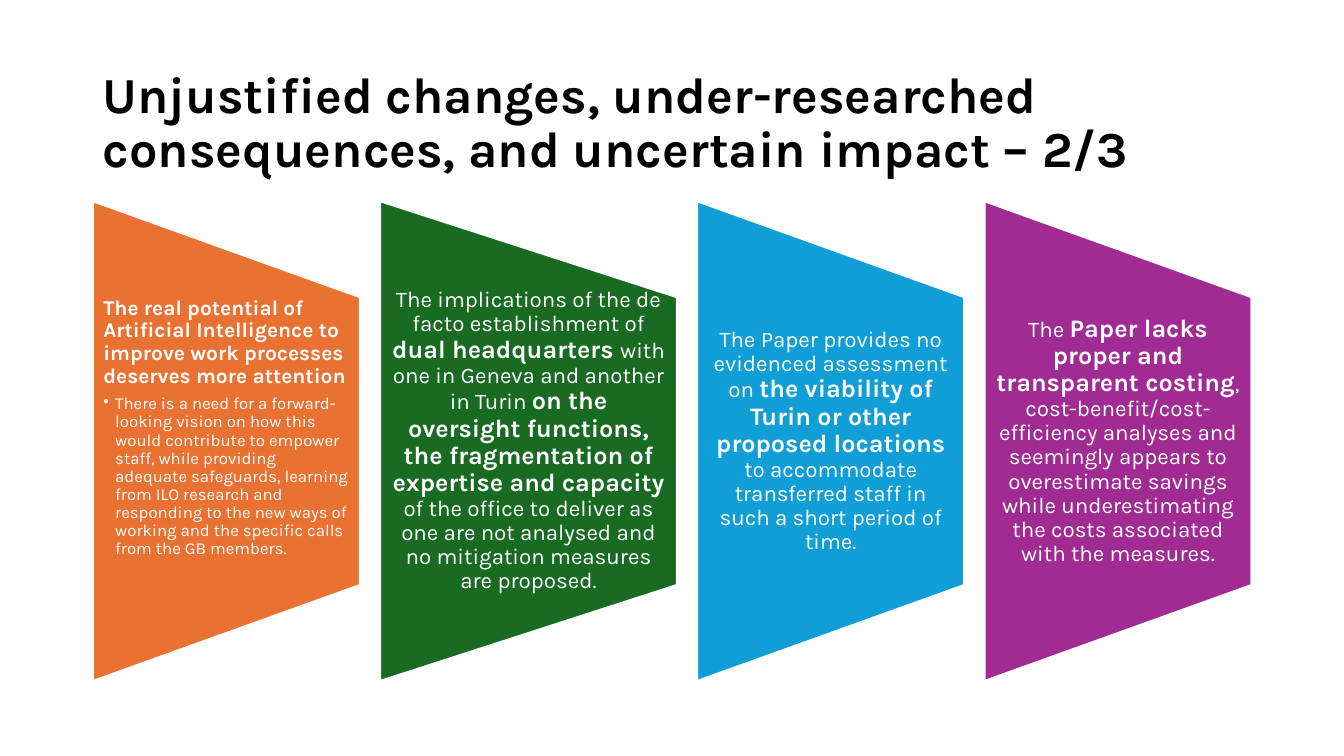
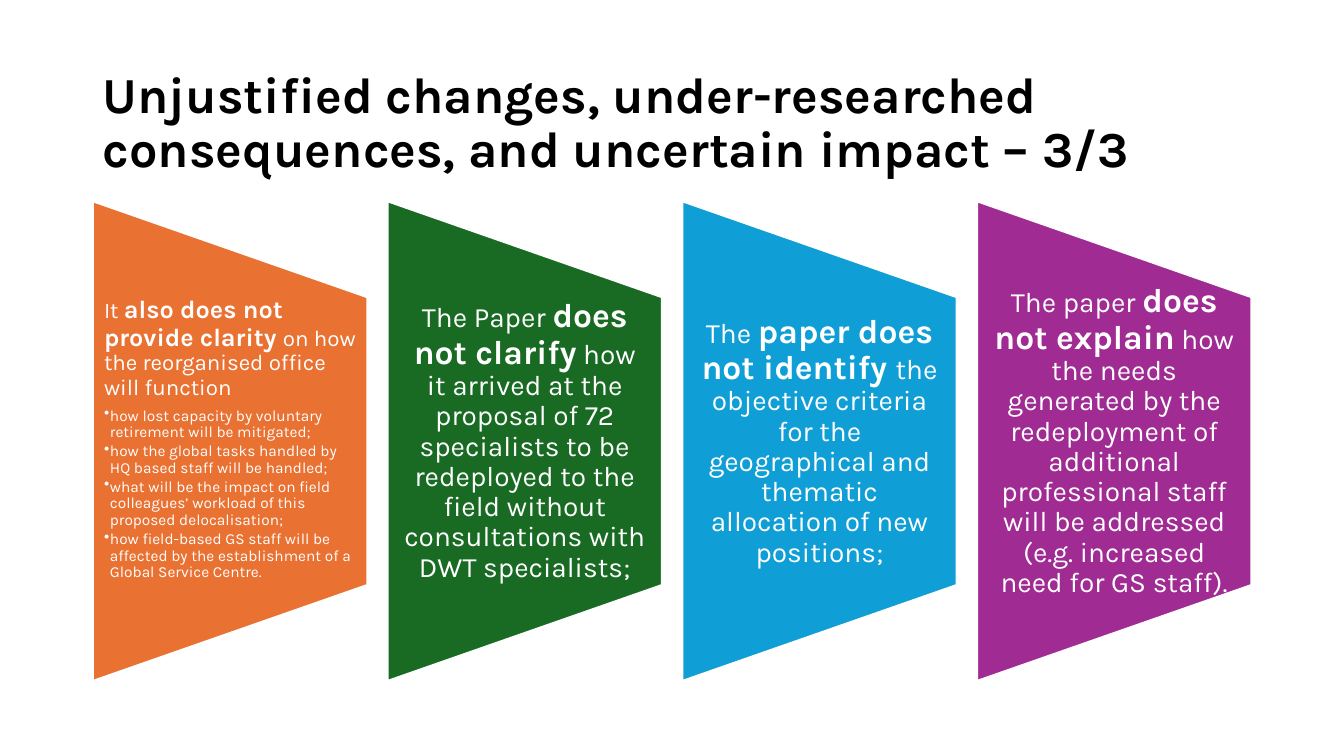
from lxml.etree import SubElement
from pptx import Presentation
from pptx.dml.color import RGBColor
from pptx.enum.shapes import MSO_SHAPE as Shape
from pptx.enum.text import MSO_ANCHOR as Anchor, PP_ALIGN as Align
from pptx.oxml.ns import qn
from pptx.util import Cm, Pt

TITLE = "Unjustified changes, under-researched consequences, and uncertain impact – {}/3"
SLIDES = [
    {
        "number": 2,
        "weights": (9, 10, 9, 9),
        "bullet_size": 12,
        "bullet_indent": 0.3,
        "cards": [
            (15, 15, "**The real potential of Artificial Intelligence to improve work "
                     "processes deserves more attention**", [
                "There is a need for a forward-looking vision on how this would contribute "
                "to empower staff, while providing adequate safeguards, learning from ILO "
                "research and responding to the new ways of working and the specific calls "
                "from the GB members.",
            ]),
            (16, 18, "The implications of the de facto establishment of **dual headquarters "
                     "**with one in Geneva and another in Turin **on the oversight functions, "
                     "the fragmentation of expertise and capacity **of the office to deliver "
                     "as one are not analysed and no mitigation measures are proposed.", []),
            (16, 18, "The Paper provides no evidenced assessment on **the viability of Turin "
                     "or other proposed locations **to accommodate transferred staff in such "
                     "a short period of time.", []),
            (16, 18, "The **Paper lacks proper and transparent costing**, cost-benefit/"
                     "cost-efficiency analyses and seemingly appears to overestimate savings "
                     "while underestimating the costs associated with the measures.", []),
        ],
    },
    {
        "number": 3,
        "weights": (1, 1, 1, 1),
        "bullet_size": 11,
        "bullet_indent": 0.15,
        "cards": [
            (16, 18, "It **also does not provide clarity **on how the reorganised office "
                     "will function", [
                "how lost capacity by voluntary retirement will be mitigated;",
                "how the global tasks handled by HQ based staff will be handled;",
                "what will be the impact on field colleagues’ workload of this proposed "
                "delocalisation;",
                "how field-based GS staff will be affected by the establishment of a "
                "Global Service Centre.",
            ]),
            (20, 24, "The Paper **does not clarify** how it arrived at the proposal of 72 "
                     "specialists to be redeployed to the field without consultations with "
                     "DWT specialists;", []),
            (20, 24, "The **paper does not identify **the objective criteria for the "
                     "geographical and thematic allocation of new positions;", []),
            (20, 24, "The paper **does not explain** how the needs generated by the "
                     "redeployment of additional professional staff will be addressed "
                     "(e.g. increased need for GS staff).", []),
        ],
    },
]

FONT = "Karla"
BLACK = RGBColor(0x00, 0x00, 0x00)
WHITE = RGBColor(0xFF, 0xFF, 0xFF)
CARD_COLOURS = (
    RGBColor(0xE9, 0x71, 0x32),
    RGBColor(0x19, 0x6B, 0x24),
    RGBColor(0x0F, 0x9E, 0xD5),
    RGBColor(0xA0, 0x2B, 0x93),
)

LEFT, CONTENT_WIDTH = 2.34, 29.2
TITLE_TOP, TITLE_HEIGHT = 1.55, 3.15
CARD_TOP, CARD_HEIGHT, CARD_GAP = 5.07, 12.09, 0.51
SLANT = CARD_HEIGHT / 5
INSET_PER_POINT = 0.0176


def add_text_frame(slide, left, top, width, height, anchor):
    box = slide.shapes.add_textbox(Cm(left), Cm(top), Cm(width), Cm(height))
    frame = box.text_frame
    frame.word_wrap = True
    frame.vertical_anchor = anchor
    return frame


def style(paragraph, size, colour, align=Align.LEFT, space=0):
    paragraph.alignment = align
    paragraph.line_spacing = 0.9
    paragraph.space_after = Pt(size * space)
    font = paragraph.font
    font.name, font.size, font.color.rgb = FONT, Pt(size), colour


def add_title(slide, number):
    frame = add_text_frame(slide, LEFT, TITLE_TOP, CONTENT_WIDTH, TITLE_HEIGHT, Anchor.MIDDLE)
    title = frame.paragraphs[0]
    title.text = TITLE.format(number)
    style(title, 36, BLACK)
    title.font.bold = True


def add_bullet(frame, text, size, indent):
    bullet = frame.add_paragraph()
    bullet.text = text
    bullet.level = 1
    properties = bullet._p.get_or_add_pPr()
    properties.set("marL", str(Cm(indent)))
    properties.set("indent", str(-Cm(indent)))
    SubElement(properties, qn("a:buChar"), char="•")
    style(bullet, size, WHITE, space=0.15)


def add_panel(slide, left, width, colour):
    panel = slide.shapes.add_shape(
        Shape.FLOWCHART_MANUAL_OPERATION,
        Cm(left + (width - CARD_HEIGHT) / 2), Cm(CARD_TOP + (CARD_HEIGHT - width) / 2),
        Cm(CARD_HEIGHT), Cm(width))
    panel.rotation = 270
    panel.shadow.inherit = False
    panel.fill.solid()
    panel.fill.fore_color.rgb = colour
    panel.line.color.rgb = WHITE
    panel.line.width = Pt(1.5)


def add_card(slide, left, width, colour, card, bullet_size, bullet_indent):
    size, bold_size, statement, bullets = card
    add_panel(slide, left, width, colour)
    anchor, align = (Anchor.TOP, Align.LEFT) if bullets else (Anchor.MIDDLE, Align.CENTER)
    frame = add_text_frame(slide, left, CARD_TOP + SLANT, width, CARD_HEIGHT - 2 * SLANT, anchor)
    frame.margin_left = frame.margin_right = Cm(size * INSET_PER_POINT)
    frame.margin_top = frame.margin_bottom = 0
    lead = frame.paragraphs[0]
    style(lead, size, WHITE, align, 0.35)
    for position, part in enumerate(statement.split("**")):
        if part:
            run = lead.add_run()
            run.text = part
            if position % 2:
                run.font.bold = True
                run.font.size = Pt(bold_size)
    for text in bullets:
        add_bullet(frame, text, bullet_size, bullet_indent)


def add_cards(slide, content):
    weights = content["weights"]
    unit = (CONTENT_WIDTH - CARD_GAP * (len(weights) - 1)) / sum(weights)
    left = LEFT
    for card, weight, colour in zip(content["cards"], weights, CARD_COLOURS):
        width = weight * unit
        add_card(slide, left, width, colour, card,
                 content["bullet_size"], content["bullet_indent"])
        left += width + CARD_GAP


def main():
    deck = Presentation()
    deck.slide_width, deck.slide_height = Cm(33.87), Cm(19.05)
    for content in SLIDES:
        slide = deck.slides.add_slide(deck.slide_layouts[6])
        add_title(slide, content["number"])
        add_cards(slide, content)
    deck.save("out.pptx")


if __name__ == "__main__":
    main()
